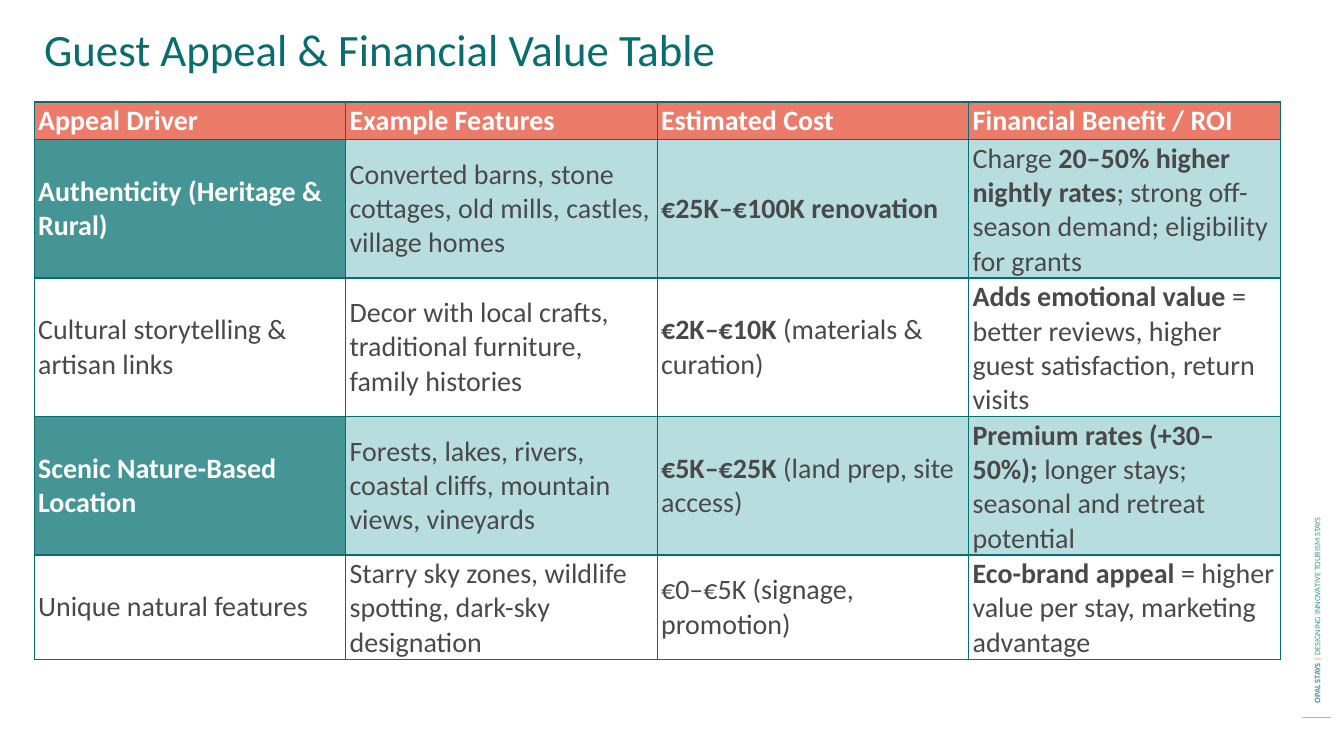
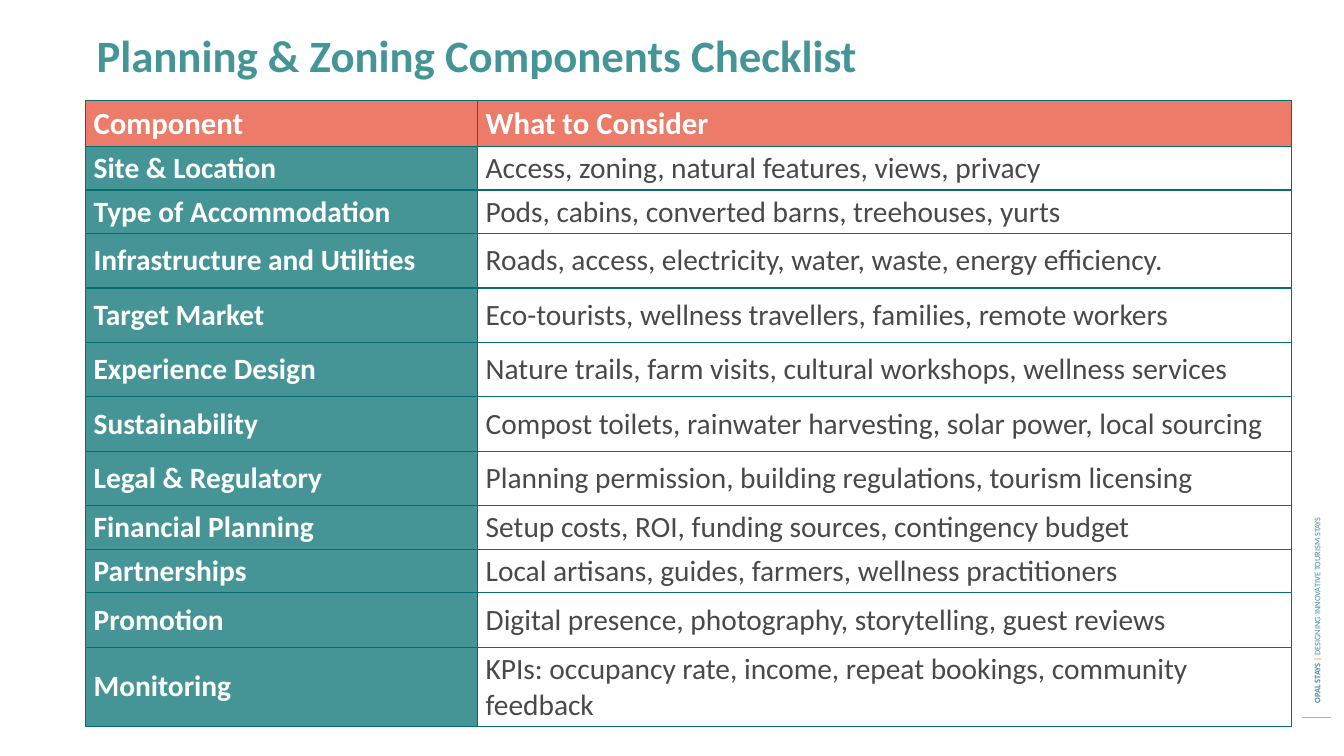
from itertools import cycle

from lxml import etree
from pptx import Presentation
from pptx.dml.color import RGBColor
from pptx.enum import shapes, text
from pptx.oxml.ns import qn
from pptx.util import Cm, Pt

TEAL = RGBColor(0x45, 0x95, 0x97)
DEEP_TEAL = RGBColor(0x08, 0x6D, 0x6E)
PALE_TEAL = RGBColor(0xB8, 0xDD, 0xDE)
CORAL = RGBColor(0xEC, 0x7C, 0x69)
ORANGE = RGBColor(0xFB, 0xA6, 0x3B)
RULE_ORANGE = RGBColor(0xFB, 0xA6, 0x3D)
GREY = RGBColor(0x49, 0x49, 0x49)
WHITE = RGBColor(0xFF, 0xFF, 0xFF)

FONT = "Calibri"
TITLE_ONLY = 5

# Text between ** marks is bold.
APPEAL_ROWS = [
    ["Appeal Driver", "Example Features", "Estimated Cost", "Financial Benefit / ROI"],
    ["Authenticity (Heritage & Rural)",
     "Converted barns, stone cottages, old mills, castles, village homes",
     "**€25K–€100K renovation**",
     "Charge **20–50% higher nightly rates**; strong off-season demand; "
     "eligibility for grants"],
    ["Cultural storytelling & artisan links",
     "Decor with local crafts, traditional furniture, family histories",
     "**€2K–€10K **(materials & curation)",
     "**Adds emotional value **= better reviews, higher guest satisfaction, return visits"],
    ["Scenic Nature-Based Location",
     "Forests, lakes, rivers, coastal cliffs, mountain views, vineyards",
     "**€5K–€25K **(land prep, site access)",
     "**Premium rates (+30–50%); **longer stays; seasonal and retreat potential"],
    ["Unique natural features",
     "Starry sky zones, wildlife spotting, dark-sky designation",
     "€0–€5K (signage, promotion)",
     "**Eco-brand appeal **= higher value per stay, marketing advantage"],
]

CHECKLIST_ROWS = [
    ["Component", "What to Consider"],
    ["Site & Location", "Access, zoning, natural features, views, privacy"],
    ["Type of Accommodation", "Pods, cabins, converted barns, treehouses, yurts"],
    ["Infrastructure and Utilities",
     "Roads, access, electricity, water, waste, energy efficiency."],
    ["Target Market", "Eco-tourists, wellness travellers, families, remote workers"],
    ["Experience Design",
     "Nature trails, farm visits, cultural workshops, wellness services"],
    ["Sustainability",
     "Compost toilets, rainwater harvesting, solar power, local sourcing"],
    ["Legal & Regulatory",
     "Planning permission, building regulations, tourism licensing"],
    ["Financial Planning", "Setup costs, ROI, funding sources, contingency budget"],
    ["Partnerships", "Local artisans, guides, farmers, wellness practitioners"],
    ["Promotion", "Digital presence, photography, storytelling, guest reviews"],
    ["Monitoring", "KPIs: occupancy rate, income, repeat bookings, community feedback"],
]


def appeal_fill(row, column):
    """Coral header, then tinted and plain rows in turn."""
    if row == 0:
        return CORAL
    if row % 2 == 0:
        return None
    return TEAL if column == 0 else PALE_TEAL


def checklist_fill(row, column):
    """Coral header and a teal first column."""
    if row == 0:
        return CORAL
    return TEAL if column == 0 else None


class StyledDeck:
    """Holds the shared style and the slide being filled."""

    def __init__(self):
        self.deck = Presentation()
        self.deck.slide_width = Cm(33.87)
        self.deck.slide_height = Cm(19.05)
        self.slide = None

    def add_slide(self):
        layout = self.deck.slide_layouts[TITLE_ONLY]
        self.slide = self.deck.slides.add_slide(layout)
        self.side_rule()
        self.side_footer()

    def span(self, para, words, size, color, bold=False):
        span = para.add_run()
        span.text = words
        span.font.name = FONT
        span.font.size = Pt(size)
        span.font.color.rgb = color
        span.font.bold = bold

    def side_rule(self):
        line = self.slide.shapes.add_connector(
            shapes.MSO_CONNECTOR.STRAIGHT, Cm(32.82), Cm(18.08), Cm(33.55), Cm(18.08))
        line.line.color.rgb = RULE_ORANGE
        line.line.width = Pt(0.75)
        etree.SubElement(line.element.find(qn("p:spPr")), qn("a:effectLst"))

    def side_footer(self):
        box = self.slide.shapes.add_textbox(Cm(25.86), Cm(10.39), Cm(14.66), Cm(0.51))
        box.rotation = 270
        frame = box.text_frame
        frame.word_wrap = True
        frame.vertical_anchor = text.MSO_ANCHOR.MIDDLE
        para = frame.paragraphs[0]
        self.span(para, "OPAL STAYS ", 6, TEAL, bold=True)
        self.span(para, "| ", 6, ORANGE, bold=True)
        self.span(para, "DESIGNING INNOVATIVE TOURISM STAYS", 6, TEAL)

    def title(self, words, left, top, color, bold=False):
        box = self.slide.shapes.title
        box.left, box.top, box.width, box.height = Cm(left), Cm(top), Cm(29), Cm(1.63)
        frame = box.text_frame
        frame.auto_size = text.MSO_AUTO_SIZE.NONE
        frame.vertical_anchor = text.MSO_ANCHOR.TOP
        para = frame.paragraphs[0]
        para.alignment = text.PP_ALIGN.LEFT
        self.span(para, words, 32, color, bold)

    def table(self, rows, left, top, widths, heights, sizes, inset, fill_rule):
        """Draw a table; sizes are header and body points, inset is the side margin."""
        grid = self.slide.shapes.add_table(
            len(rows), len(widths), Cm(left), Cm(top),
            Cm(sum(widths)), Cm(sum(heights))).table
        grid.first_row = grid.horz_banding = False
        for column, width in zip(grid.columns, widths):
            column.width = Cm(width)
        for row, height in zip(grid.rows, heights):
            row.height = Cm(height)
        for r, row in enumerate(rows):
            for c, words in enumerate(row):
                self.cell(grid.cell(r, c), words, sizes[min(r, 1)], inset, fill_rule(r, c))

    def cell(self, cell, words, size, inset, fill):
        cell.vertical_anchor = text.MSO_ANCHOR.MIDDLE
        cell.margin_left = cell.margin_right = Cm(inset)
        cell.margin_top = cell.margin_bottom = Cm(inset / 2)
        if fill is None:
            cell.fill.background()
        else:
            cell.fill.solid()
            cell.fill.fore_color.rgb = fill
        self.cell_borders(cell)
        strong = fill in (CORAL, TEAL)
        para = cell.text_frame.paragraphs[0]
        for part, bold in zip(words.split("**"), cycle([False, True])):
            if part:
                self.span(para, part, size, WHITE if strong else GREY, strong or bold)

    def cell_borders(self, cell):
        properties = cell._tc.get_or_add_tcPr()
        for index, side in enumerate(("lnL", "lnR", "lnT", "lnB")):
            border = etree.Element(qn("a:" + side), w=str(Pt(1)))
            fill = etree.SubElement(border, qn("a:solidFill"))
            etree.SubElement(fill, qn("a:srgbClr"), val=str(DEEP_TEAL))
            properties.insert(index, border)


def main():
    show = StyledDeck()

    show.add_slide()
    show.title("Guest Appeal & Financial Value Table", 0.86, 0.41, DEEP_TEAL)
    show.table(APPEAL_ROWS, 0.86, 2.57, [7.85] * 4, [0.9] + [3.48] * 3 + [2.6],
               (20, 20), 0.1, appeal_fill)

    show.add_slide()
    show.title("Planning & Zoning Components Checklist", 2.18, 0.56, TEAL, bold=True)
    short, tall = 1.1, 1.37
    heights = [1.15] + [short] * 2 + [tall] * 5 + [short] * 2 + [tall, 2]
    show.table(CHECKLIST_ROWS, 2.16, 2.54, [9.88, 20.5], heights,
               (22, 21), 0.2, checklist_fill)

    show.deck.save("out.pptx")


if __name__ == "__main__":
    main()
